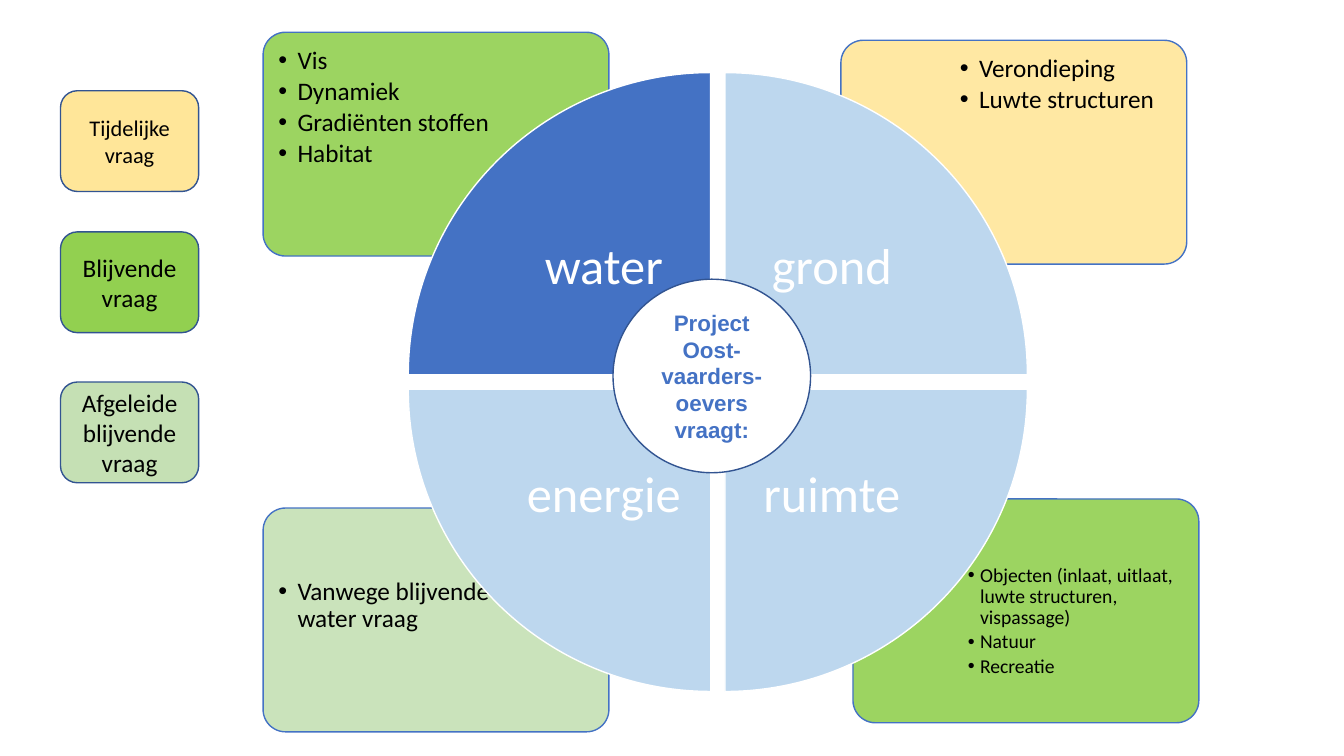
from dataclasses import dataclass

from lxml import etree
from pptx import Presentation
from pptx import util as u
from pptx.dml.color import RGBColor
from pptx.enum import shapes, text
from pptx.oxml import ns

BLUE = RGBColor(0x44, 0x72, 0xC4)
DARK_BLUE = RGBColor(0x32, 0x54, 0x91)
PALE_BLUE = RGBColor(0xBD, 0xD7, 0xEE)
GREEN = RGBColor(0x92, 0xD0, 0x50)
PALE_GREEN = RGBColor(0xC5, 0xE0, 0xB4)
YELLOW = RGBColor(0xFF, 0xE6, 0x99)
WHITE = RGBColor(0xFF, 0xFF, 0xFF)
BLACK = RGBColor(0x00, 0x00, 0x00)

SLIDE_WIDTH, SLIDE_HEIGHT = u.Inches(13.33), u.Inches(7.5)


@dataclass(frozen=True)
class Box:
    """Place and size in percent of the slide's width and height."""
    left: float
    top: float
    width: float
    height: float

    def lengths(self) -> tuple[int, int, int, int]:
        return (round(SLIDE_WIDTH * self.left / 100), round(SLIDE_HEIGHT * self.top / 100),
                round(SLIDE_WIDTH * self.width / 100), round(SLIDE_HEIGHT * self.height / 100))

    def inscribed(self) -> "Box":
        """The text area inside an ellipse that fills this box."""
        share = 0.146
        return Box(self.left + self.width * share, self.top + self.height * share,
                   self.width * (1 - 2 * share), self.height * (1 - 2 * share))


@dataclass(frozen=True)
class Quadrant:
    label: str
    column: int
    row: int
    rotation: int
    wedge_fill: RGBColor
    card_left: float
    card_top: float
    card_fill: RGBColor
    placeholder: int
    items: tuple[str, ...]
    size: int = 18
    inset: float = 0.1
    indent: float = 0.19


@dataclass(frozen=True)
class LegendItem:
    label: str
    top: float
    fill: RGBColor
    size: int


# From back to front
QUADRANTS = (
    Quadrant("ruimte", 1, 1, 180, PALE_BLUE, 63.47, 66, GREEN, 4,
             ("Objecten (inlaat, uitlaat, luwte structuren, vispassage)",
              "Natuur", "Recreatie"), 14, 0.06, 0.12),
    Quadrant("energie", 0, 1, 270, PALE_BLUE, 19.58, 67.2, PALE_GREEN, 3,
             ("Vanwege blijvende water vraag",)),
    Quadrant("grond", 1, 0, 90, PALE_BLUE, 62.57, 5.33, YELLOW, 2,
             ("Verondieping", "Luwte structuren")),
    Quadrant("water", 0, 0, 0, BLUE, 19.58, 4.27, GREEN, 1,
             ("Vis", "Dynamiek", "Gradiënten stoffen", "Habitat")),
)
LEGEND = (
    LegendItem("Tijdelijke vraag", 12, YELLOW, 16),
    LegendItem("Blijvende vraag", 30.67, GREEN, 18),
    LegendItem("Afgeleide blijvende vraag", 50.53, PALE_GREEN, 18),
)

# Wheel grid: one entry per column or row
WEDGE_LEFT, WEDGE_TOP = (30.38, 53.94), (9.6, 51.47)
WEDGE_WIDTH, WEDGE_HEIGHT = 22.5, 40
LABEL_WIDTH, LABEL_HEIGHT = 15.9, 28.27
LIST_SHIFT_X, LIST_SHIFT_Y = (0.38, 8.1), (0.67, 8)
HUB = Box(45.61, 36.93, 14.7, 25.6)


def add_panel(page, kind: shapes.MSO_SHAPE, box: Box, fill: RGBColor, line: RGBColor):
    panel = page.shapes.add_shape(kind, *box.lengths())
    panel.shadow.inherit = False
    panel.fill.solid()
    panel.fill.fore_color.rgb = fill
    panel.line.color.rgb = line
    panel.line.width = u.Pt(1)
    return panel


def set_insets(frame, inset: float) -> None:
    frame.margin_left = frame.margin_right = u.Inches(inset)
    frame.margin_top = frame.margin_bottom = u.Inches(inset)


def format_text(frame, size: int, color: RGBColor, font: str = "Calibri",
                bold: bool = False, align=text.PP_ALIGN.CENTER,
                anchor=text.MSO_ANCHOR.MIDDLE) -> None:
    frame.word_wrap = True
    frame.auto_size = text.MSO_AUTO_SIZE.NONE
    frame.vertical_anchor = anchor
    for para in frame.paragraphs:
        para.alignment = align
        for span in para.runs:
            span.font.name = font
            span.font.size = u.Pt(size)
            span.font.bold = bold
            span.font.color.rgb = color


def place(page, holder, box: Box) -> None:
    """Move a placeholder to its box and in front of what is drawn so far."""
    holder.left, holder.top, holder.width, holder.height = box.lengths()
    page.shapes._spTree.append(holder._element)


def add_card(page, quadrant: Quadrant) -> None:
    box = Box(quadrant.card_left, quadrant.card_top, 25.73, 29.6)
    card = add_panel(page, shapes.MSO_SHAPE.ROUNDED_RECTANGLE, box, quadrant.card_fill, BLUE)
    card.adjustments[0] = 0.1
    tint = card._element.spPr.find(ns.qn("a:solidFill")).find(ns.qn("a:srgbClr"))
    etree.SubElement(tint, ns.qn("a:alpha"), val="90000")

    # Bulleted list
    holder = page.placeholders[quadrant.placeholder]
    place(page, holder, Box(box.left + LIST_SHIFT_X[quadrant.column],
                            box.top + LIST_SHIFT_Y[quadrant.row], 17.25, 20.93))
    frame = holder.text_frame
    frame.text = "\n".join(quadrant.items)
    set_insets(frame, quadrant.inset)
    format_text(frame, quadrant.size, BLACK, align=text.PP_ALIGN.LEFT,
                anchor=text.MSO_ANCHOR.TOP)
    indent = u.Inches(quadrant.indent)
    for para in frame.paragraphs:
        para.line_spacing = 0.9
        para.space_before = u.Pt(0)
        para.space_after = u.Pt(quadrant.size * 0.15)
        properties = para._p.get_or_add_pPr()
        properties.set("marL", str(indent))
        properties.set("indent", str(-indent))
        etree.SubElement(properties, ns.qn("a:buFont"), typeface="Arial")
        etree.SubElement(properties, ns.qn("a:buChar"), char="•")


def add_wedge(page, quadrant: Quadrant) -> None:
    left, top = WEDGE_LEFT[quadrant.column], WEDGE_TOP[quadrant.row]
    wedge = add_panel(page, shapes.MSO_SHAPE.PIE_WEDGE,
                      Box(left, top, WEDGE_WIDTH, WEDGE_HEIGHT), quadrant.wedge_fill, WHITE)
    wedge.rotation = quadrant.rotation

    # The label sits in the corner nearest the hub
    if quadrant.column == 0:
        left += WEDGE_WIDTH - LABEL_WIDTH
    if quadrant.row == 0:
        top += WEDGE_HEIGHT - LABEL_HEIGHT
    label = page.shapes.add_textbox(*Box(left, top, LABEL_WIDTH, LABEL_HEIGHT).lengths())
    frame = label.text_frame
    frame.text = quadrant.label
    set_insets(frame, 0.28)
    format_text(frame, 36, WHITE)
    frame.paragraphs[0].line_spacing = 0.9
    frame.paragraphs[0].space_after = u.Pt(36 * 0.35)


def add_hub(page) -> None:
    add_panel(page, shapes.MSO_SHAPE.OVAL, HUB, WHITE, DARK_BLUE)
    title = page.shapes.title
    place(page, title, HUB.inscribed())
    title.text_frame.text = "Project\nOost-vaarders-oevers\nvraagt:"
    format_text(title.text_frame, 16, BLUE, "Arial", bold=True)


def add_legend_item(page, item: LegendItem) -> None:
    panel = add_panel(page, shapes.MSO_SHAPE.ROUNDED_RECTANGLE,
                      Box(4.5, item.top, 10.28, 13.33), item.fill, DARK_BLUE)
    panel.text_frame.text = item.label
    format_text(panel.text_frame, item.size, BLACK)


def main() -> None:
    deck = Presentation()
    deck.slide_width, deck.slide_height = SLIDE_WIDTH, SLIDE_HEIGHT
    page = deck.slides.add_slide(deck.slide_layouts.get_by_name("Comparison"))
    for quadrant in QUADRANTS:
        add_card(page, quadrant)
    for quadrant in QUADRANTS:
        add_wedge(page, quadrant)
    add_hub(page)
    for item in LEGEND:
        add_legend_item(page, item)
    deck.save("out.pptx")


if __name__ == "__main__":
    main()
